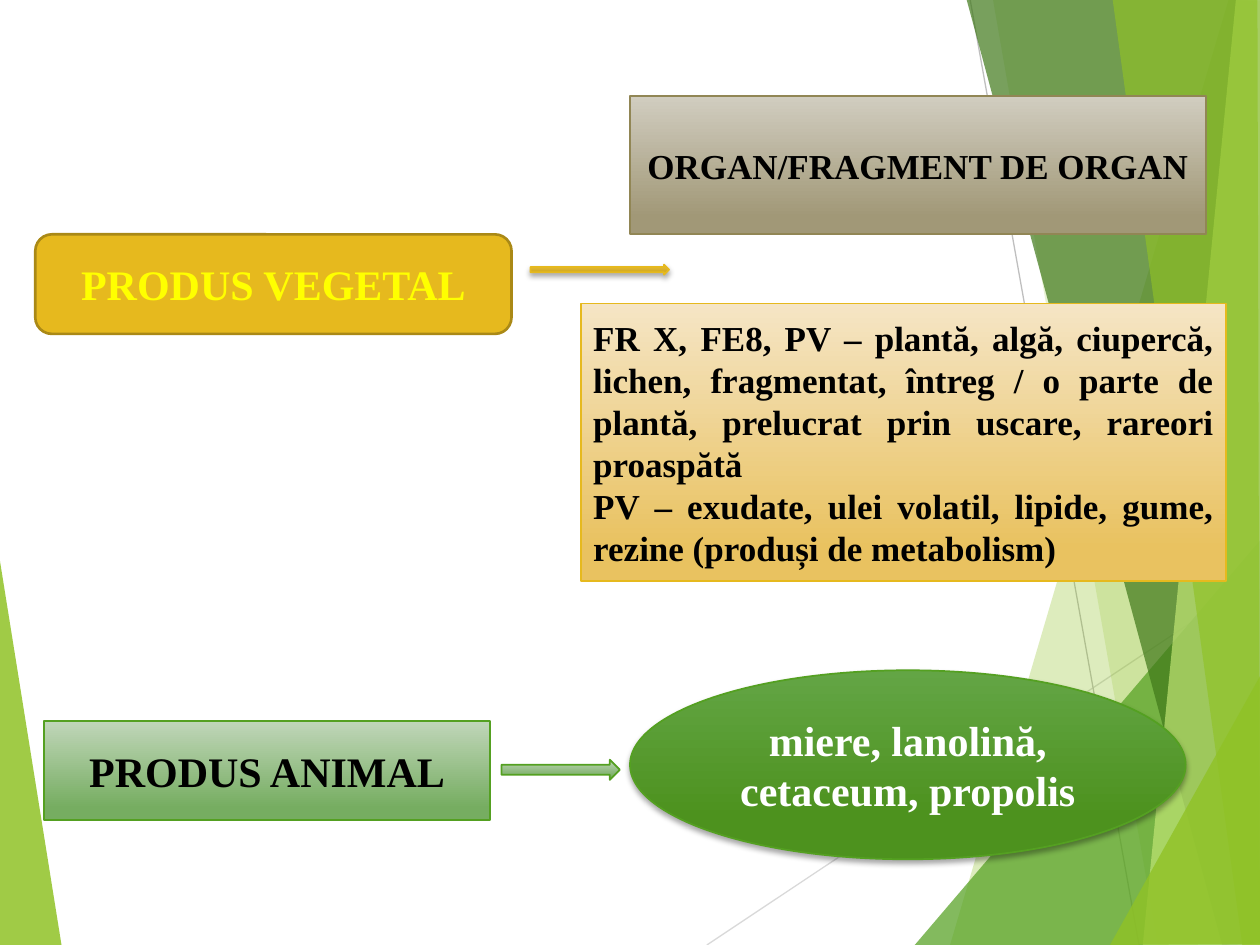
from lxml import etree
from pptx import Presentation
from pptx import util as u
from pptx.dml.color import RGBColor
from pptx.enum import shapes, text
from pptx.oxml.ns import qn

FONT = "Times New Roman"
C = {
    "lime": "90C226", "green": "54A021", "forest": "3F7819", "pale": "C0E474",
    "grey": "D9D9D9", "mid_grey": "BFBFBF", "gold": "E6B91E", "dark_gold": "AA8916",
    "taupe": "918655", "yellow": "FFFF00", "black": "000000", "white": "FFFFFF",
}
# Gradients run top to bottom: top colour, bottom colour, end position
GRADIENTS = {
    "taupe": ("D1CDC0", "A19877", 0.88),
    "sand": ("F5E5C5", "E9C260", 0.88),
    "sage": ("C0D6B9", "76AD61", 0.88),
    "leaf": ("63A545", "4D921E", 0.78),
    "amber": ("E7BC43", "D2A91B", 0.78),
}

# Backdrop: (colour, opacity %, outline) and (colour, start, end)
LEFT_FACET = ("lime", 85, [(-0.01, 4.39), (0.49, 7.51), (-0.01, 7.5)])
RAYS = [("grey", (5.61, 7.5), (10.01, 4.57)), ("mid_grey", (7.7, 0), (9.04, 7.5))]
RIGHT_FACETS = [
    ("lime", 30, [(9.75, 0), (7.54, 7.5), (10.02, 7.51), (10.01, 0.01)]),
    ("lime", 20, [(7.88, -0.01), (9.19, 7.5), (10.01, 7.5), (10.01, -0.01)]),
    ("green", 72, [(7.26, 7.5), (10, 4.29), (10.01, 7.5)]),
    ("forest", 70, [(7.67, -0.01), (9.7, 7.5), (10.01, 7.49), (10.01, -0.01)]),
    ("pale", 70, [(9.81, -0.01), (9.07, 7.5), (10.01, 7.5), (10, -0.01)]),
    ("lime", 65, [(8.83, -0.01), (9.86, 7.5), (10, 7.5), (9.98, -0.01)]),
    ("lime", 80, [(8.81, 7.5), (10.01, 5.35), (10.01, 7.49)]),
]

KIND = shapes.MSO_SHAPE
CENTER, JUSTIFY = text.PP_ALIGN.CENTER, text.PP_ALIGN.JUSTIFY
BOXES = [
    dict(kind=KIND.ROUNDED_RECTANGLE, at=(0.28, 1.86, 3.78, 0.79), fill="gold",
         line="dark_gold", width=1.5, size=24, color="yellow", lines=["PRODUS VEGETAL"]),
    dict(kind=KIND.RECTANGLE, at=(5, 0.76, 4.57, 1.1), fill="taupe", line="taupe",
         size=20, lines=["ORGAN/FRAGMENT DE ORGAN"]),
    dict(kind=KIND.RECTANGLE, at=(4.61, 2.41, 5.12, 2.2), fill="sand", line="gold",
         size=20, align=JUSTIFY, lines=[
             "FR X, FE8, PV – plantă, algă, ciupercă, lichen, fragmentat, întreg / "
             "o parte de plantă, prelucrat prin uscare, rareori proaspătă",
             "PV – exudate, ulei volatil, lipide, gume, rezine (produși de metabolism)"]),
    dict(kind=KIND.RECTANGLE, at=(0.35, 5.72, 3.54, 0.79), fill="sage", line="green",
         size=24, lines=["PRODUS ANIMAL"]),
    dict(kind=KIND.OVAL, at=(5, 5.32, 4.41, 1.5), fill="leaf", line="green", shadow=True,
         size=24, color="white", lines=["miere, lanolină, cetaceum, propolis"]),
    dict(kind=KIND.RIGHT_ARROW, at=(4.21, 2.1, 1.1, 0.08), fill="amber", line="gold",
         shadow=True),
    dict(kind=KIND.RIGHT_ARROW, at=(3.98, 6.03, 0.94, 0.16), fill="sage", line="green"),
]


def rgb(name):
    return RGBColor.from_string(C.get(name, name))


def set_alpha(color_el, percent):
    etree.SubElement(color_el, qn("a:alpha")).set("val", str(percent * 1000))


def add_facet(slide, color, opacity, points):
    start, *rest = [(u.Inches(x), u.Inches(y)) for x, y in points]
    builder = slide.shapes.build_freeform(*start)
    builder.add_line_segments(rest, close=True)
    sp = builder.convert_to_shape()
    sp.shadow.inherit = False
    sp.line.fill.background()
    sp.fill.solid()
    sp.fill.fore_color.rgb = rgb(color)
    set_alpha(next(sp._element.spPr.iter(qn("a:srgbClr"))), opacity)


def add_ray(slide, color, start, end):
    ends = [u.Inches(v) for v in start + end]
    ray = slide.shapes.add_connector(shapes.MSO_CONNECTOR.STRAIGHT, *ends)
    ray.line.color.rgb = rgb(color)
    ray.line.width = u.Pt(0.75)
    etree.SubElement(ray._element.spPr, qn("a:effectLst"))


def fill_shape(sp, name):
    if name not in GRADIENTS:
        sp.fill.solid()
        sp.fill.fore_color.rgb = rgb(name)
        return
    top, bottom, end = GRADIENTS[name]
    sp.fill.gradient()
    sp.fill.gradient_angle = 270
    for stop, color, pos in zip(sp.fill.gradient_stops, (top, bottom), (0, end)):
        stop.color.rgb = rgb(color)
        stop.position = pos


def add_drop_shadow(sp):
    effects = sp._element.spPr.find(qn("a:effectLst"))
    shadow = etree.SubElement(effects, qn("a:outerShdw"))
    values = dict(blurRad=u.Pt(3), dist=u.Pt(2), dir=90 * 60000, rotWithShape=0)
    for key, value in values.items():
        shadow.set(key, str(int(value)))
    color = etree.SubElement(shadow, qn("a:srgbClr"))
    color.set("val", C["black"])
    set_alpha(color, 35)


def write_lines(tf, box):
    tf.word_wrap = True
    tf.vertical_anchor = text.MSO_ANCHOR.MIDDLE
    style = dict(name=FONT, size=u.Pt(box["size"]), bold=True)
    for i, line in enumerate(box["lines"]):
        p = tf.add_paragraph() if i else tf.paragraphs[0]
        p.alignment = box.get("align", CENTER)
        r = p.add_run()
        r.text = line
        for key, value in style.items():
            setattr(r.font, key, value)
        r.font.color.rgb = rgb(box.get("color", "black"))


def add_box(slide, box):
    sp = slide.shapes.add_shape(box["kind"], *map(u.Inches, box["at"]))
    sp.shadow.inherit = False
    fill_shape(sp, box["fill"])
    sp.line.color.rgb = rgb(box["line"])
    sp.line.width = u.Pt(box.get("width", 1))
    if box.get("shadow"):
        add_drop_shadow(sp)
    if "lines" in box:
        write_lines(sp.text_frame, box)


def main():
    prs = Presentation()
    prs.slide_width, prs.slide_height = u.Inches(10), u.Inches(7.5)
    slide = prs.slides.add_slide(prs.slide_layouts[6])
    add_facet(slide, *LEFT_FACET)
    for ray in RAYS:
        add_ray(slide, *ray)
    for facet in RIGHT_FACETS:
        add_facet(slide, *facet)
    for box in BOXES:
        add_box(slide, box)
    prs.save("out.pptx")


if __name__ == "__main__":
    main()
